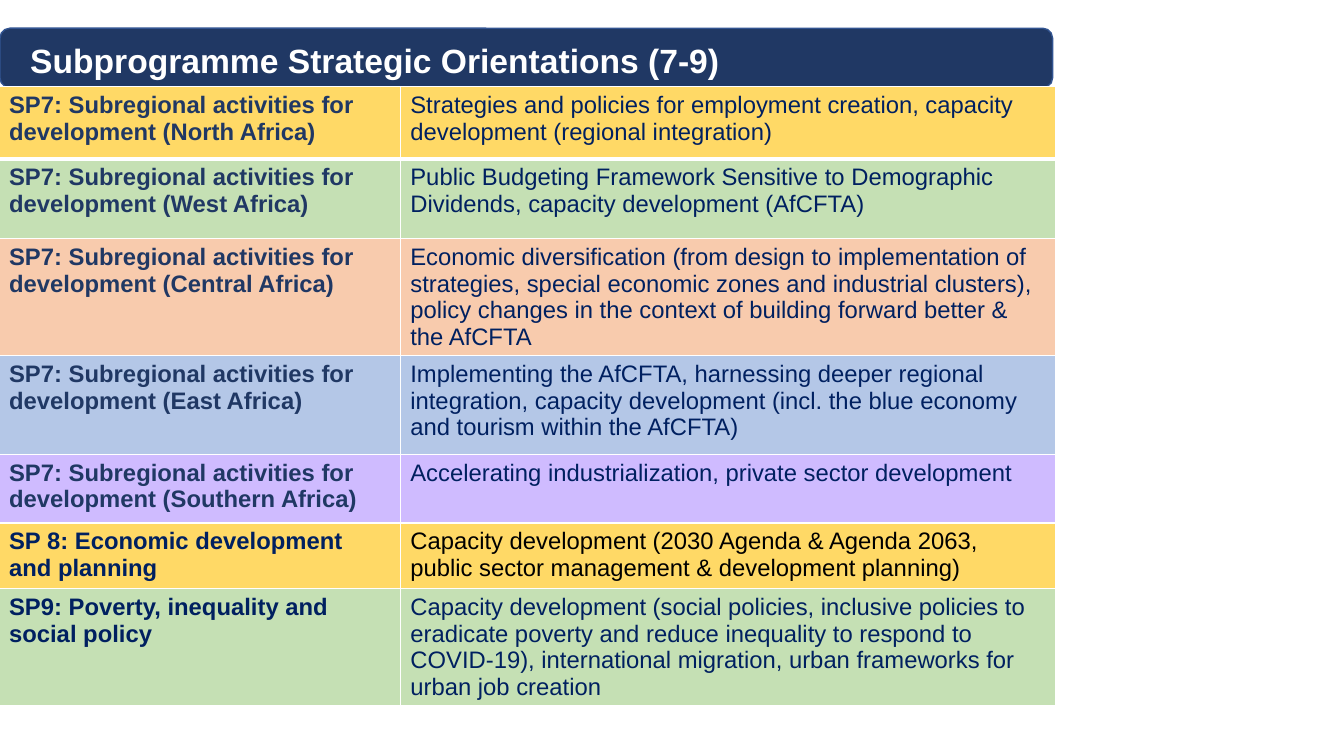
from lxml import etree
from pptx import Presentation
from pptx.dml.color import RGBColor
from pptx.enum import shapes, text
from pptx.oxml import ns
from pptx.util import Inches, Pt

NAVY, SLATE, BLACK, WHITE = "002060", "203864", "000000", "FFFFFF"
GOLD, GREEN, PEACH, BLUE, LILAC = "FFD966", "C5E0B4", "F8CBAD", "B4C7E7", "CFBBFF"
REGIONAL = "SP7: Subregional activities for development "
COLUMN_WIDTHS = (3.98, 6.5)

ROWS = [
    (0.72, GOLD, SLATE, REGIONAL + "(North Africa)", NAVY,
     "Strategies and policies for employment creation, capacity development "
     "(regional integration)"),
    (0.79, GREEN, SLATE, REGIONAL + "(West Africa)", NAVY,
     "Public Budgeting Framework Sensitive to Demographic Dividends, "
     "capacity development (AfCFTA)"),
    (1.08, PEACH, SLATE, REGIONAL + "(Central Africa)", NAVY,
     "Economic diversification (from design to implementation of strategies, "
     "special economic zones and industrial clusters), policy changes in the "
     "context of building forward better & the AfCFTA"),
    (0.98, BLUE, SLATE, REGIONAL + "(East Africa)", NAVY,
     "Implementing the AfCFTA, harnessing deeper regional integration, capacity "
     "development (incl. the blue economy and tourism within the AfCFTA)"),
    (0.68, LILAC, SLATE, REGIONAL + "(Southern Africa)", NAVY,
     "Accelerating industrialization, private sector development"),
    (0.65, GOLD, NAVY, "SP 8: Economic development and planning", BLACK,
     "Capacity development (2030 Agenda & Agenda 2063, public sector management "
     "& development planning)"),
    (1.15, GREEN, NAVY, "SP9: Poverty, inequality and social policy", NAVY,
     "Capacity development (social policies, inclusive policies to eradicate "
     "poverty and reduce inequality to respond to COVID-19), international "
     "migration, urban frameworks for urban job creation"),
]


def rgb(value):
    return RGBColor.from_string(value)


def format_text(tf, size, color, bold):
    for p in tf.paragraphs:
        p.alignment = text.PP_ALIGN.LEFT
        for r in p.runs:
            r.font.name = "Arial"
            r.font.size = Pt(size)
            r.font.bold = bold
            r.font.color.rgb = rgb(color)


def add_band(s):
    sp = s.shapes.add_shape(shapes.MSO_SHAPE.ROUNDED_RECTANGLE,
                            Inches(0), Inches(0.28), Inches(10.44), Inches(0.59))
    sp.shadow.inherit = False
    sp.fill.solid()
    sp.fill.fore_color.rgb = rgb(SLATE)
    sp.line.color.rgb = rgb("325491")
    sp.line.width = Pt(1)
    return sp


def set_title(s, title):
    sp = s.shapes.title
    sp.left, sp.top = Inches(0.2), Inches(0.35)
    sp.width, sp.height = Inches(9.07), Inches(0.5)
    tf = sp.text_frame
    tf.text = title
    tf.word_wrap = True
    tf.vertical_anchor = text.MSO_ANCHOR.TOP
    format_text(tf, 24, WHITE, True)
    return sp


def set_borders(cell, bottom):
    tc_pr = cell._tc.get_or_add_tcPr()
    for side, width in (("L", 1), ("R", 1), ("T", 1), ("B", bottom)):
        ln = etree.SubElement(tc_pr, ns.qn("a:ln" + side), w=str(Pt(width)))
        fill = etree.SubElement(ln, ns.qn("a:solidFill"))
        etree.SubElement(fill, ns.qn("a:srgbClr"), val=WHITE)


def fill_cell(cell, content, fill, color, bold, bottom):
    set_borders(cell, bottom)
    cell.fill.solid()
    cell.fill.fore_color.rgb = rgb(fill)
    cell.text_frame.text = content
    format_text(cell.text_frame, 17, color, bold)


def add_orientations(s):
    height = sum(row[0] for row in ROWS)
    frame = s.shapes.add_table(len(ROWS), 2, Inches(-0.01), Inches(0.86),
                               Inches(sum(COLUMN_WIDTHS)), Inches(height))
    table = frame.table
    table.first_row = table.horz_banding = False
    for column, width in zip(table.columns, COLUMN_WIDTHS):
        column.width = Inches(width)
    for i, (height, fill, name_color, name, color, focus) in enumerate(ROWS):
        table.rows[i].height = Inches(height)
        bottom = 3 if i == 0 else 1
        fill_cell(table.cell(i, 0), name, fill, name_color, True, bottom)
        fill_cell(table.cell(i, 1), focus, fill, color, False, bottom)


def main():
    """Build the subprogramme orientations slide."""
    prs = Presentation()
    prs.slide_width, prs.slide_height = Inches(13.33), Inches(7.5)
    s = prs.slides.add_slide(prs.slide_layouts[5])
    title = set_title(s, "Subprogramme Strategic Orientations (7-9)")
    title.element.addprevious(add_band(s).element)
    add_orientations(s)
    prs.save("out.pptx")


if __name__ == "__main__":
    main()
